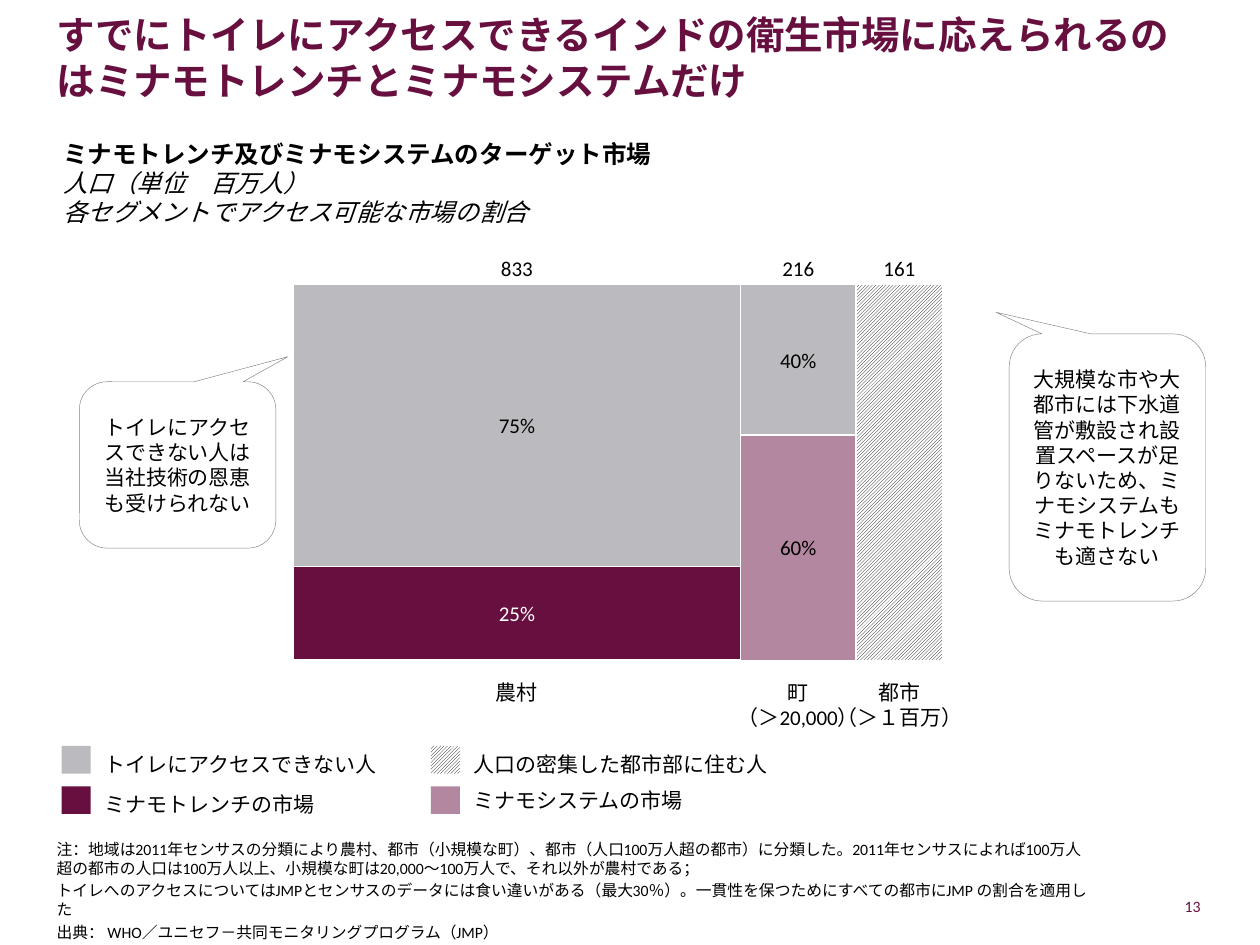
from dataclasses import dataclass

from lxml import etree
from pptx import Presentation
from pptx.dml.color import RGBColor
from pptx.enum.dml import MSO_PATTERN
from pptx.enum.shapes import MSO_CONNECTOR, MSO_SHAPE
from pptx.enum.text import MSO_ANCHOR, MSO_AUTO_SIZE, PP_ALIGN
from pptx.oxml.ns import qn
from pptx.util import Inches, Pt

RECTANGLE = MSO_SHAPE.RECTANGLE
CALLOUT = MSO_SHAPE.ROUNDED_RECTANGULAR_CALLOUT
STRAIGHT = MSO_CONNECTOR.STRAIGHT
HATCHING = MSO_PATTERN.LIGHT_UPWARD_DIAGONAL
NO_FIT = MSO_AUTO_SIZE.NONE
TOP, MIDDLE, BOTTOM = MSO_ANCHOR.TOP, MSO_ANCHOR.MIDDLE, MSO_ANCHOR.BOTTOM
LEFT, CENTER, RIGHT = PP_ALIGN.LEFT, PP_ALIGN.CENTER, PP_ALIGN.RIGHT

COLUMNS, ROWS = 100, 75
SLIDE_WIDTH, SLIDE_HEIGHT = Inches(10), Inches(7.5)
HATCHED = "hatched"


@dataclass(frozen=True)
class Theme:
    font: str = "Calibri"
    plum: str = "67103F"
    mauve: str = "B3879F"
    silver: str = "BBBBBF"
    outline: str = "808080"
    black: str = "000000"
    white: str = "FFFFFF"
    title: float = 22
    heading: float = 14
    label: float = 12
    note: float = 9


THEME = Theme()

TITLE = "すでにトイレにアクセスできるインドの衛生市場に応えられるのはミナモトレンチとミナモシステムだけ"
NOTES = [
    "注：地域は2011年センサスの分類により農村、都市（小規模な町）、都市（人口100万人超の都市）に分類した。"
    "2011年センサスによれば100万人超の都市の人口は100万人以上、小規模な町は20,000～100万人で、それ以外が農村である；",
    "トイレへのアクセスについてはJMPとセンサスのデータには食い違いがある（最大30％）。"
    "一貫性を保つためにすべての都市にJMP の割合を適用した",
    "出典： WHO／ユニセフ－共同モニタリングプログラム（JMP）",
]
HEADING = "ミナモトレンチ及びミナモシステムのターゲット市場"
SUBHEADINGS = ["人口（単位　百万人）", "各セグメントでアクセス可能な市場の割合"]

REGIONS = [
    (833, ["農村"], [(75, THEME.silver, THEME.black), (25, THEME.plum, THEME.white)]),
    (216, ["町", "（＞20,000）"], [(40, THEME.silver, THEME.black), (60, THEME.mauve, THEME.black)]),
    (161, ["都市", "（＞１百万）"], [(100, HATCHED, None)]),
]
LEGEND = [
    (0, 0, 2.9, THEME.silver, "トイレにアクセスできない人"),
    (1, 0, 2.9, HATCHED, "人口の密集した都市部に住む人"),
    (0, 1, 2.9, THEME.plum, "ミナモトレンチの市場"),
    (1, 1, 2.2, THEME.mauve, "ミナモシステムの市場"),
]
CALLOUTS = [
    ((6.3, 30.3, 15.6, 13.2), (0.562, -0.651, 0.167),
     "トイレにアクセスできない人は当社技術の恩恵も受けられない"),
    ((80.1, 26.5, 15.6, 21.2), (-0.567, -0.581, 0.167),
     "大規模な市や大都市には下水道管が敷設され設置スペースが足りないため、ミナモシステムもミナモトレンチも適さない"),
]


def across(columns):
    return round(SLIDE_WIDTH * columns / COLUMNS)


def down(rows):
    return round(SLIDE_HEIGHT * rows / ROWS)


def area(left, top, width, height):
    return across(left), down(top), across(width), down(height)


def rgb(code):
    return RGBColor.from_string(code)


def write(frame, lines, *, size=THEME.label, color=THEME.black, bold=False, italic=False,
          align=LEFT, anchor=TOP, wrap=True, inset=0, gap=0, append=False):
    frame.word_wrap = wrap
    frame.auto_size = NO_FIT
    frame.vertical_anchor = anchor
    if inset is not None:
        frame.margin_left = frame.margin_right = Inches(inset)
        frame.margin_top = frame.margin_bottom = 0
    for index, line in enumerate(lines):
        fresh = index == 0 and not append
        paragraph = frame.paragraphs[0] if fresh else frame.add_paragraph()
        paragraph.alignment = align
        paragraph.space_before = Pt(0 if fresh else gap)
        run = paragraph.add_run()
        run.text = line
        run.font.name = THEME.font
        run.font.size = Pt(size)
        run.font.bold = bold
        run.font.italic = italic
        run.font.color.rgb = rgb(color)


def add_label(slide, place, lines, **text_format):
    label = slide.shapes.add_textbox(*area(*place))
    write(label.text_frame, lines, **text_format)
    return label


def paint(shape, fill, line=None, weight=0.75):
    shape.shadow.inherit = False
    if fill == HATCHED:
        shape.fill.patterned()
        shape.fill.pattern = HATCHING
        shape.fill.fore_color.rgb = rgb(THEME.black)
        shape.fill.back_color.rgb = rgb(THEME.white)
    else:
        shape.fill.solid()
        shape.fill.fore_color.rgb = rgb(fill)
    if line:
        shape.line.color.rgb = rgb(line)
        shape.line.width = Pt(weight)
    else:
        shape.line.fill.background()


def add_block(slide, place, fill, line=None):
    block = slide.shapes.add_shape(RECTANGLE, *area(*place))
    paint(block, fill, line)


def add_callout(slide, place, adjustments, remark):
    callout = slide.shapes.add_shape(CALLOUT, *area(*place))
    for index, value in enumerate(adjustments):
        callout.adjustments[index] = value
    paint(callout, THEME.white, THEME.outline, 0.25)
    write(callout.text_frame, [remark], align=CENTER, anchor=MIDDLE, inset=None)


def add_baseline(slide, left, right, level):
    baseline = slide.shapes.add_connector(
        STRAIGHT, across(left), down(level), across(right), down(level))
    baseline.line.color.rgb = rgb(THEME.black)
    baseline.line.width = Pt(0.75)
    etree.SubElement(baseline.element.spPr, qn("a:effectLst"))


def fill_placeholders(slide):
    title, notes = slide.placeholders
    title.left, title.top, title.width, title.height = area(4.5, 1.5, 90.9, 6.7)
    write(title.text_frame, [TITLE], size=THEME.title, color=THEME.plum, bold=True, anchor=BOTTOM)
    notes.left, notes.top, notes.width, notes.height = area(4.5, 70.5, 82.5, 4.2)
    write(notes.text_frame, NOTES, size=THEME.note, anchor=BOTTOM, gap=THEME.note * 0.2)
    for paragraph in notes.text_frame.paragraphs:
        properties = paragraph._p.get_or_add_pPr()
        properties.set("marL", "0")
        properties.set("indent", "0")
        etree.SubElement(properties, qn("a:buNone"))


def add_market_map(slide, left=23.3, top=22.6, width=51.5, height=29.8):
    add_baseline(slide, left, left + width, top + height)
    total = sum(population for population, _, _ in REGIONS)
    for population, names, segments in REGIONS:
        region_width = width * population / total
        level = top
        for share, fill, ink in segments:
            segment_height = height * share / 100
            place = left, level, region_width, segment_height
            add_block(slide, place, fill, THEME.white)
            if ink:
                add_label(slide, place, [f"{share}%"], color=ink, align=CENTER, anchor=MIDDLE)
            level += segment_height
        add_label(slide, (left, top - 2.3, region_width, 2), [str(population)],
                  align=CENTER, anchor=BOTTOM)
        add_label(slide, (left, top + height + 1.5, region_width, 2 * len(names)), names,
                  align=CENTER, wrap=False)
        left += region_width


def add_legend(slide, left=4.9, top=59.2, column_step=29.3, row_step=3.2):
    for column, row, height, fill, meaning in LEGEND:
        x, y = left + column * column_step, top + row * row_step
        add_block(slide, (x, y, 2.3, 2.2), fill)
        add_label(slide, (x + 3.4, y, 24.3, height), [meaning], anchor=MIDDLE)


def main():
    deck = Presentation()
    deck.slide_width, deck.slide_height = SLIDE_WIDTH, SLIDE_HEIGHT
    slide = deck.slides.add_slide(deck.slide_layouts[1])
    fill_placeholders(slide)
    add_label(slide, (88, 70.3, 7.3, 3.2), ["13"], size=THEME.note, color=THEME.plum,
              align=RIGHT, anchor=MIDDLE)
    heading = add_label(slide, (5, 11, 65.5, 7.2), [HEADING], size=THEME.heading, bold=True)
    write(heading.text_frame, SUBHEADINGS, size=THEME.heading, italic=True, append=True)
    add_market_map(slide)
    add_legend(slide)
    for place, adjustments, remark in CALLOUTS:
        add_callout(slide, place, adjustments, remark)
    deck.save("out.pptx")


if __name__ == "__main__":
    main()
